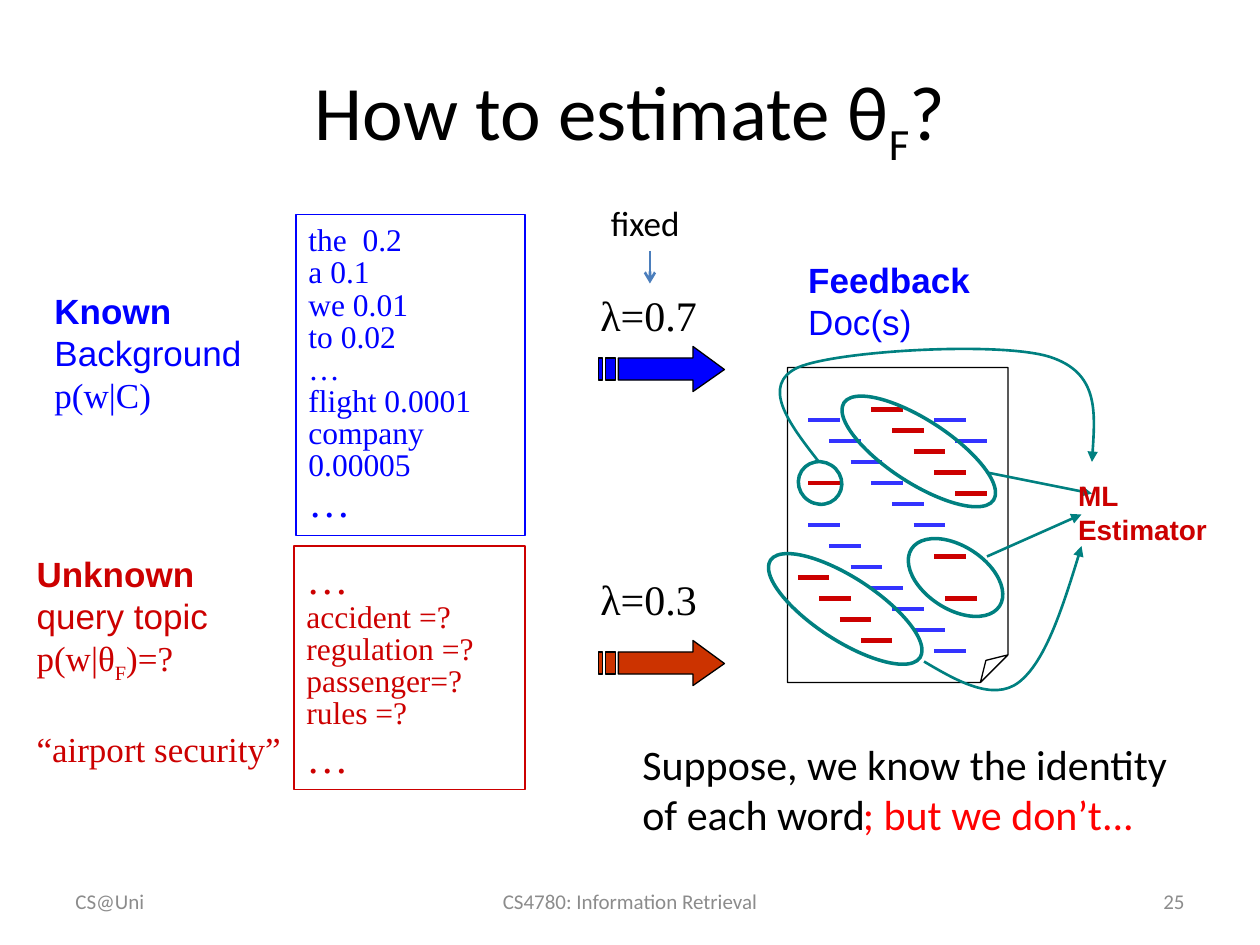
"""Build the slide on estimating a feedback topic model."""
import lxml.etree
import pptx
import pptx.dml.color
import pptx.enum.shapes
import pptx.enum.text
import pptx.oxml
import pptx.oxml.ns
import pptx.util

RGB = pptx.dml.color.RGBColor
BLACK, GRAY = RGB(0, 0, 0), RGB(0x8C, 0x8C, 0x8C)
BLUE, DASH, STEEL = RGB(0, 0, 0xFF), RGB(0x33, 0x33, 0xFF), RGB(0x4B, 0x7E, 0xBC)
RED, BRIGHT, RUST = RGB(0xCC, 0, 0), RGB(0xFF, 0, 0), RGB(0xCC, 0x33, 0)
TEAL = RGB(0, 0x80, 0x80)

KIND = pptx.enum.shapes.MSO_SHAPE
ALIGN = pptx.enum.text.PP_ALIGN
ANCHOR = pptx.enum.text.MSO_ANCHOR
FIT = pptx.enum.text.MSO_AUTO_SIZE
Pt, qn = pptx.util.Pt, pptx.oxml.ns.qn
PX = 7620


def face(name, size, bold=False):
    return {"name": name, "size": Pt(size), "bold": bold}


SERIF, SMALL, BIG = (face("Times New Roman", n) for n in (20, 18, 24))
SANS, HEAD, LABEL = face("Arial", 20), face("Arial", 20, True), face("Arial", 16, True)
TITLE, BODY, NOTE, FOOT = (face("Calibri", n) for n in (44, 24, 20, 12))
TIGHT = {"line_spacing": 0.85}
LEFT, MID, RIGHT = ({"alignment": a} for a in (ALIGN.LEFT, ALIGN.CENTER, ALIGN.RIGHT))
GROW = {"word_wrap": True, "auto_size": FIT.SHAPE_TO_FIT_TEXT}
FREE = {"word_wrap": False, "auto_size": FIT.SHAPE_TO_FIT_TEXT}
BAND = {"word_wrap": True, "vertical_anchor": ANCHOR.MIDDLE}

KNOWN = ["a 0.1", "we 0.01", "to 0.02", "…", "flight 0.0001", "company 0.00005"]
ASKED = ["accident =?", "regulation =?", "passenger=?", "rules =?"]
PANELS = [
    ((282, 204, 218, 306), BLUE, [("the  0.2", SMALL, LEFT)]
     + [(row, SMALL, TIGHT) for row in KNOWN] + [("…", BIG, TIGHT)]),
    ((280, 520, 220, 232), RED, [("…", BIG, LEFT)]
     + [(row, SMALL, TIGHT) for row in ASKED] + [("…", BIG, LEFT)]),
]
TEXTS = [
    ((60, 36, 1080, 150), BLACK, BAND, [("How to estimate θ~F~?", TITLE, MID)]),
    ((40, 270, 210, 132), BLUE, FREE,
     [("Known", HEAD, LEFT), ("Background", SANS, LEFT), ("p(w|C)", SERIF, LEFT)]),
    ((23, 520, 268, 214), RED, FREE,
     [("Unknown", HEAD, LEFT), ("query topic", SANS, LEFT), ("p(w|θ~F~)=?", SERIF, LEFT),
      ("“airport security”", SERIF, {"space_before": Pt(25)})]),
    ((560, 270, 119, 60), BLACK, FREE, [("λ=0.7", BIG, LEFT)]),
    ((560, 540, 119, 60), BLACK, FREE, [("λ=0.3", BIG, LEFT)]),
    ((758, 240, 180, 92), BLUE, FREE, [("Feedback", HEAD, LEFT), ("Doc(s)", SANS, LEFT)]),
    ((600, 697, 540, 109), BLACK, GROW,
     [("Suppose, we know the identity of each word", BODY, LEFT)]),
    ((1015, 450, 148, 77), RED, FREE, [("ML", LABEL, LEFT), ("Estimator", LABEL, LEFT)]),
    ((570, 186, 126, 53), BLACK, GROW, [("fixed", NOTE, LEFT)]),
    ((810, 745, 284, 60), BRIGHT, FREE, [("; but we don’t...", BODY, LEFT)]),
    ((60, 834, 280, 48), GRAY, BAND, [("CS@Uni", FOOT, LEFT)]),
    ((410, 834, 380, 48), GRAY, BAND, [("CS4780: Information Retrieval", FOOT, MID)]),
    ((860, 834, 280, 48), GRAY, BAND, [("25", FOOT, RIGHT)]),
]
ARROWS = [(570, 330, BLUE), (570, 610, RUST)]
BLOCK = [
    [(90, 0), (90, 11), (19, 11), (19, 32), (90, 32), (90, 43), (120, 22)],
    [(7, 11), (7, 32), (16, 32), (16, 11)],
    [(0, 11), (0, 32), (4, 32), (4, 11)],
]
STAIRS = [
    (DASH, 770, 400, 6), (DASH, 890, 400, 2), (DASH, 770, 500, 6), (DASH, 890, 620, 1),
    (RED, 830, 390, 5), (RED, 760, 550, 4), (RED, 890, 530, 1), (RED, 900, 570, 1),
    (RED, 770, 460, 1),
]
STEP, DASH_W = 20, 30
RINGS = [(790, 400, 170, 60), (720, 550, 170, 60), (860, 520, 100, 60), (760, 440, 42, 40)]
LINKS = [
    ((940, 450, 1040, 470), TEAL, "triangle"),
    ((940, 530, 1030, 490), TEAL, "triangle"),
    ((619, 239, 619, 270), STEEL, "arrow"),
]
CURVES = [
    [(880, 630), (912, 649), (946, 668), (970, 650), (995, 631), (1013, 576), (1030, 520)],
    [(780, 440), (751, 403), (724, 367), (760, 350), (797, 334), (953, 325), (1000, 340),
     (1046, 355), (1043, 397), (1040, 440)],
]


def emu(box):
    return [n * PX for n in box]


def style(shape, line, width, fill=None):
    shape.shadow.inherit = False
    if fill is None:
        shape.fill.background()
    else:
        shape.fill.solid()
        shape.fill.fore_color.rgb = fill
    shape.line.color.rgb = line
    shape.line.width = Pt(width)


def tip(shape, kind):
    lxml.etree.SubElement(shape.line._get_or_add_ln(), qn("a:tailEnd"), type=kind)


def write(shape, color, frame, rows):
    body = shape.text_frame
    for key, val in frame.items():
        setattr(body, key, val)
    for i, (text, font, form) in enumerate(rows):
        para = body.paragraphs[0] if i == 0 else body.add_paragraph()
        for key, val in {**LEFT, **form}.items():
            setattr(para, key, val)
        for j, part in enumerate(text.split("~")):
            run = para.add_run()
            run.text = part
            for key, val in font.items():
                setattr(run.font, key, val)
            run.font.color.rgb = color
            if j % 2:
                run._r.get_or_add_rPr().set("baseline", "-25000")


def join(shapes, ends, color, width, head=None):
    line = shapes.add_connector(pptx.enum.shapes.MSO_CONNECTOR.STRAIGHT, *emu(ends))
    line.line.color.rgb = color
    line.line.width = Pt(width)
    if head:
        tip(line, head)
    lxml.etree.SubElement(line._element.spPr, qn("a:effectLst"))


def block(shapes, left, top, fill):
    draw = None
    for part in BLOCK:
        first, *rest = [(left + x, top + y) for x, y in part]
        if draw is None:
            draw = shapes.build_freeform(*first, scale=PX)
        else:
            draw.move_to(*first)
        draw.add_line_segments(rest, close=True)
    style(draw.convert_to_shape(), BLACK, 0.75, fill)


def curve(shapes, pts):
    draw = shapes.build_freeform(*pts[0], scale=PX)
    draw.add_line_segments(pts[1:], close=False)
    shape = draw.convert_to_shape()
    segs = list(shape._element.iter(qn("a:lnTo")))
    trace = segs[0].getparent()
    for i in range(0, len(segs), 3):
        bez = lxml.etree.SubElement(trace, qn("a:cubicBezTo"))
        for seg in segs[i:i + 3]:
            bez.append(seg[0])
            trace.remove(seg)
    style(shape, TEAL, 1.5)
    tip(shape, "triangle")


def main():
    deck = pptx.Presentation()
    deck.slide_width, deck.slide_height = emu((1200, 900))
    shapes = deck.slides.add_slide(deck.slide_layouts[6]).shapes
    for box, color, rows in PANELS:
        panel = shapes.add_shape(KIND.RECTANGLE, *emu(box))
        style(panel, color, 0.75)
        write(panel, color, {**GROW, "vertical_anchor": ANCHOR.TOP}, rows)
    page = shapes.add_shape(KIND.FOLDED_CORNER, *emu((750, 350, 210, 300)))
    fold = next(page._element.iter(qn("a:avLst")))
    lxml.etree.SubElement(fold, qn("a:gd"), name="adj", fmla="val 12500")
    style(page, BLACK, 0.75)
    for arrow in ARROWS:
        block(shapes, *arrow)
    for color, left, top, count in STAIRS:
        for i in range(count):
            x, y = left + i * STEP, top + i * STEP
            join(shapes, (x, y, x + DASH_W, y), color, 2.5)
    for box in RINGS:
        ring = shapes.add_shape(KIND.OVAL, *emu(box))
        ring.rotation = 33
        style(ring, TEAL, 2)
    for ends, color, head in LINKS:
        join(shapes, ends, color, 1.5, head)
    for pts in CURVES:
        curve(shapes, pts)
    for box, color, frame, rows in TEXTS:
        write(shapes.add_textbox(*emu(box)), color, frame, rows)
    deck.save("out.pptx")


if __name__ == "__main__":
    main()
